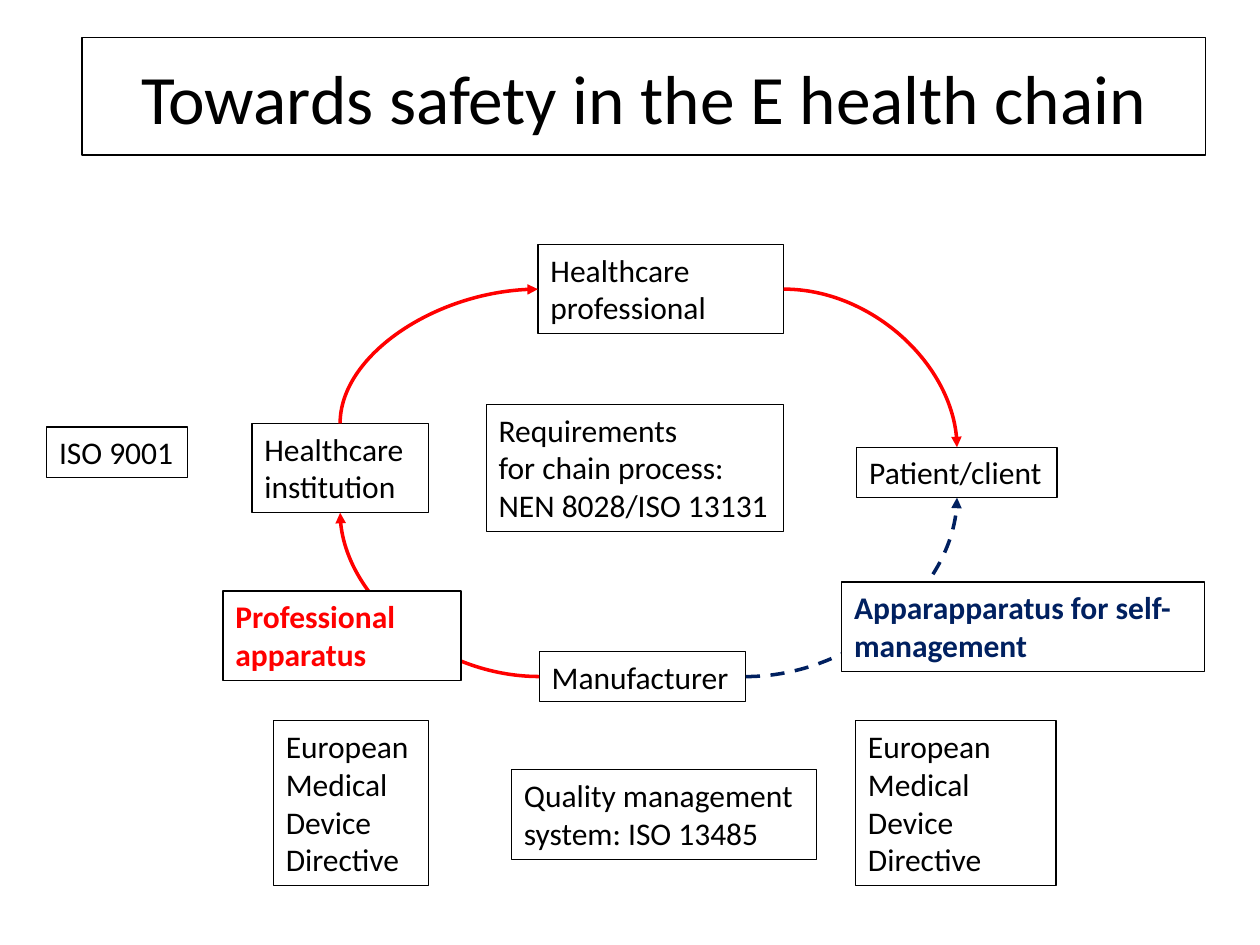
from dataclasses import dataclass

from lxml.etree import SubElement
from pptx import Presentation
from pptx.dml.color import RGBColor
from pptx.enum.dml import MSO_LINE
from pptx.enum.shapes import MSO_CONNECTOR
from pptx.enum.text import MSO_ANCHOR, MSO_AUTO_SIZE, PP_ALIGN
from pptx.oxml.ns import qn
from pptx.util import Inches, Pt

# Connection sites of a rectangle
TOP, LEFT, BOTTOM, RIGHT = range(4)


@dataclass(frozen=True)
class Theme:
    font: str = "Calibri"
    title_size: float = 39.6
    body_size: float = 18
    black: RGBColor = RGBColor(0, 0, 0)
    white: RGBColor = RGBColor(255, 255, 255)
    red: RGBColor = RGBColor(255, 0, 0)
    navy: RGBColor = RGBColor(0, 0x20, 0x60)
    border: float = 0.75
    arrow: float = 2


def write_text(tf, text, *, font, size, color, bold=False, align=PP_ALIGN.LEFT):
    """Fill a text frame, one paragraph for each line of text."""
    for i, line in enumerate(text.split("\n")):
        p = tf.add_paragraph() if i else tf.paragraphs[0]
        p.alignment = align
        r = p.add_run()
        r.text = line
        r.font.name, r.font.size, r.font.bold = font, Pt(size), bold
        r.font.color.rgb = color


class ChainSlide:
    def __init__(self, prs, theme):
        self.theme = theme
        self.s = prs.slides.add_slide(prs.slide_layouts[6])

    def _frame(self, x, y, w, h):
        sp = self.s.shapes.add_textbox(Inches(x), Inches(y), Inches(w), Inches(h))
        sp.line.color.rgb = self.theme.black
        sp.line.width = Pt(self.theme.border)
        return sp

    def title(self, text, x, y, w, h):
        sp = self._frame(x, y, w, h)
        tf = sp.text_frame
        tf.word_wrap = True
        tf.vertical_anchor = MSO_ANCHOR.MIDDLE
        write_text(tf, text, font=self.theme.font, size=self.theme.title_size,
                   color=self.theme.black, align=PP_ALIGN.CENTER)

    def box(self, text, x, y, w, h, wrap=True):
        sp = self._frame(x, y, w, h)
        tf = sp.text_frame
        tf.word_wrap = wrap
        tf.auto_size = MSO_AUTO_SIZE.SHAPE_TO_FIT_TEXT
        write_text(tf, text, font=self.theme.font, size=self.theme.body_size,
                   color=self.theme.black)
        return sp

    def label(self, text, x, y, w, h, color):
        """Opaque box with bold text that lies over an arrow."""
        sp = self._frame(x, y, w, h)
        sp.fill.solid()
        sp.fill.fore_color.rgb = self.theme.white
        tf = sp.text_frame
        tf.word_wrap = True
        tf.auto_size = MSO_AUTO_SIZE.SHAPE_TO_FIT_TEXT
        write_text(tf, text, font=self.theme.font, size=self.theme.body_size,
                   color=color, bold=True)

    def arc(self, side, side_site, end, end_site, color, dash=None, arrow="tailEnd"):
        """Quarter curve that leaves a box sideways and meets another vertically."""
        c = self.s.shapes.add_connector(MSO_CONNECTOR.CURVE, 0, 0, 0, 0)
        c.begin_connect(side, side_site)
        c.end_connect(end, end_site)
        c.line.color.rgb = color
        c.line.width = Pt(self.theme.arrow)
        if dash:
            c.line.dash_style = dash
        sp_pr = c._element.spPr
        sp_pr.find(qn("a:prstGeom")).set("prst", "curvedConnector2")
        SubElement(sp_pr.find(qn("a:ln")), qn("a:" + arrow), type="triangle")
        SubElement(sp_pr, qn("a:effectLst"))


def main():
    prs = Presentation()
    prs.slide_width, prs.slide_height = Inches(10), Inches(7.5)
    theme = Theme()
    slide = ChainSlide(prs, theme)

    slide.title("Towards safety in the E health chain", 0.65, 0.3, 8.92, 0.93)

    # Parties in the chain
    slide.box("Requirements\nfor chain process:\nNEN 8028/ISO 13131",
              3.86, 3.21, 2.36, 1.01, wrap=False)
    manufacturer = slide.box("Manufacturer", 4.28, 5.17, 1.64, 0.4)
    institution = slide.box("Healthcare institution", 2, 3.36, 1.4, 0.71)
    patient = slide.box("Patient/client", 6.8, 3.55, 1.59, 0.4, wrap=False)
    professional = slide.box("Healthcare professional", 4.27, 1.94, 1.95, 0.71)

    # Arrows between the parties
    slide.arc(manufacturer, LEFT, institution, BOTTOM, theme.red)
    slide.arc(professional, LEFT, institution, TOP, theme.red, arrow="headEnd")
    slide.arc(professional, RIGHT, patient, TOP, theme.red)
    slide.arc(manufacturer, RIGHT, patient, BOTTOM, theme.navy, dash=MSO_LINE.DASH)

    # Standards and directives
    slide.box("Quality management\nsystem: ISO 13485", 4.06, 6.11, 2.42, 0.71, wrap=False)
    slide.box("ISO 9001", 0.37, 3.39, 1.12, 0.4, wrap=False)
    for x, w in ((2.17, 1.23), (6.79, 1.59)):
        slide.box("European Medical Device Directive", x, 5.72, w, 1.31)

    # Apparatus labels over the lower arrows
    slide.label("Professional apparatus", 1.77, 4.69, 1.89, 0.71, theme.red)
    slide.label("Apparapparatus for self-management", 6.68, 4.62, 2.88, 0.71, theme.navy)

    prs.save("out.pptx")


if __name__ == "__main__":
    main()
